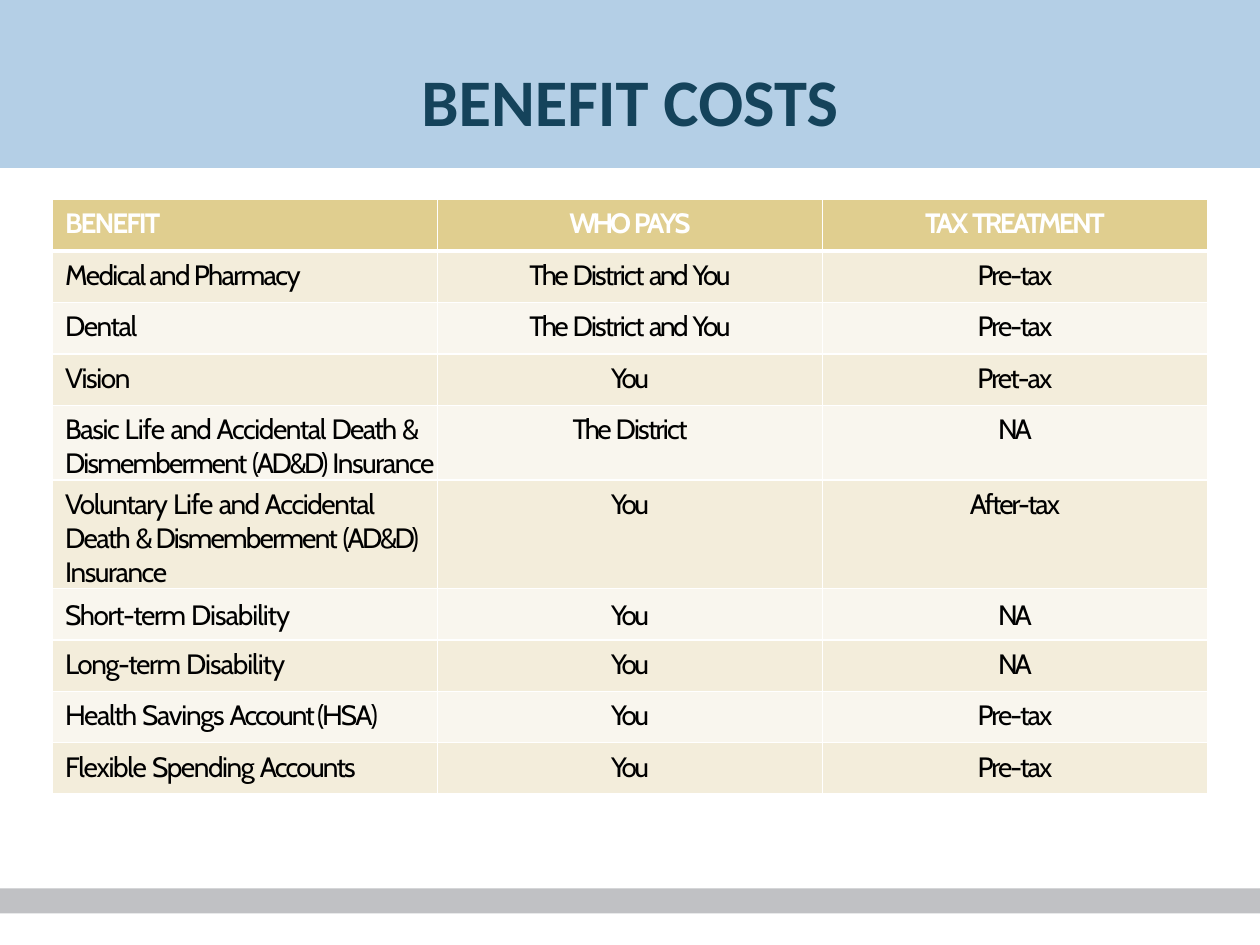
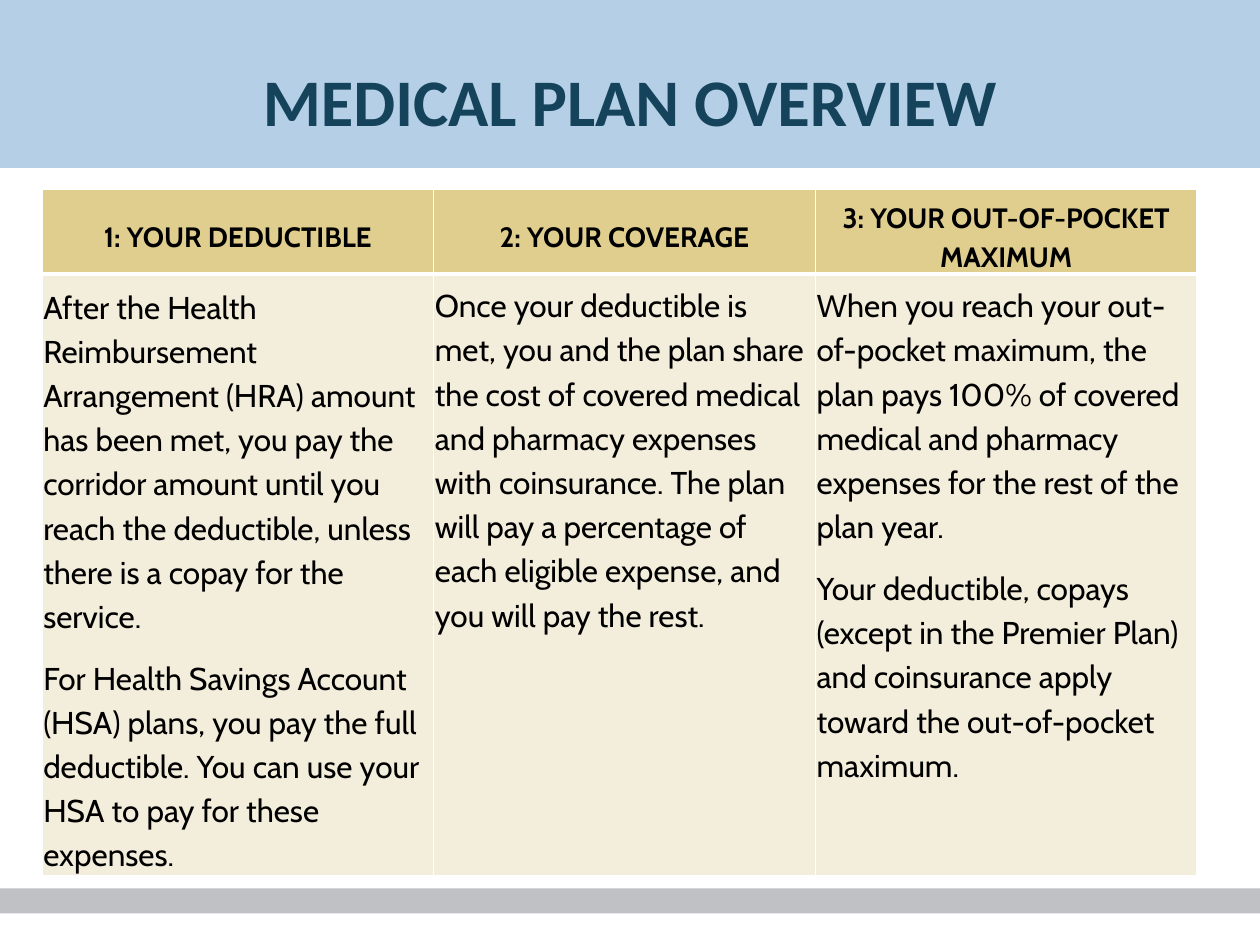
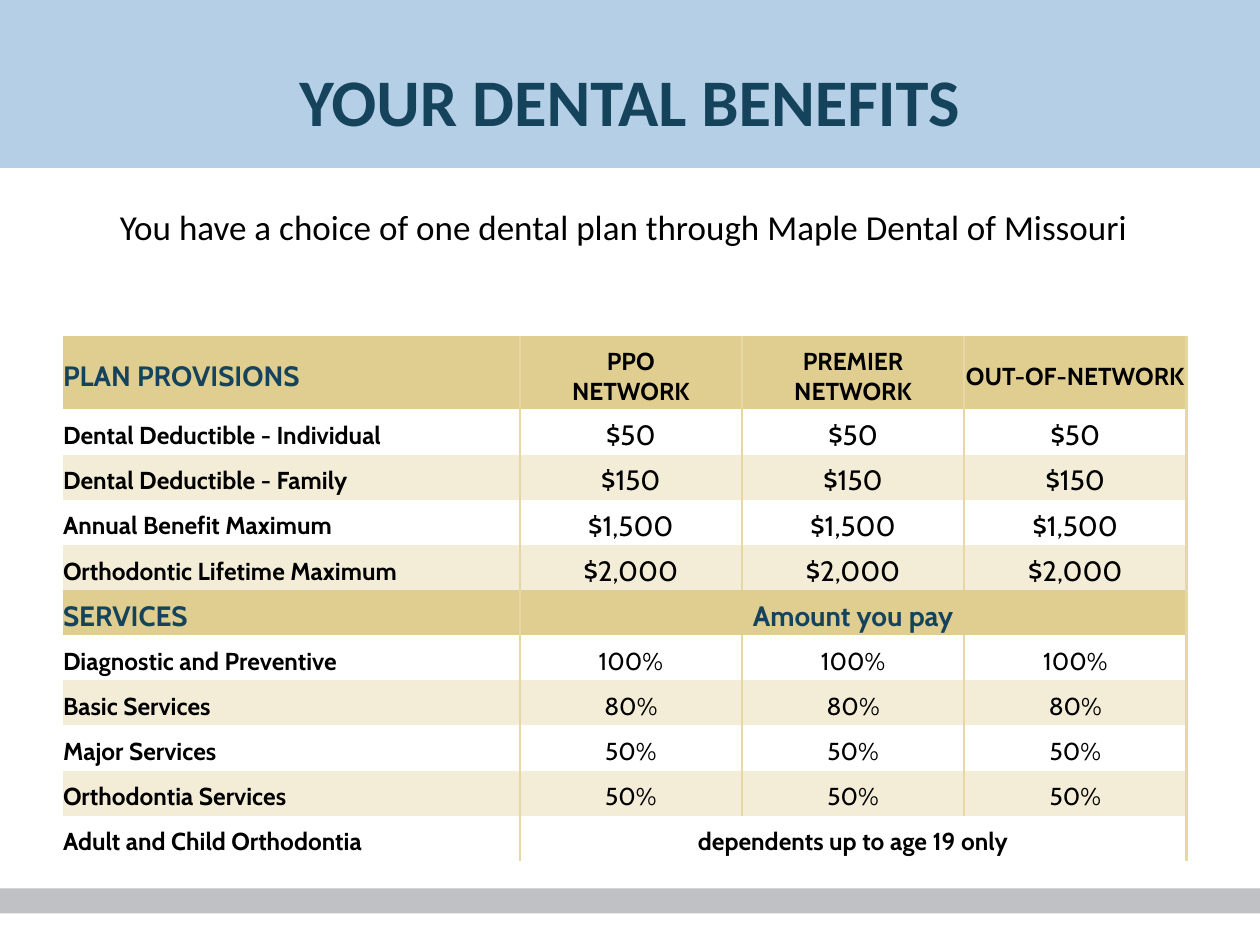
from dataclasses import dataclass, field, replace

from lxml import etree
from pptx import Presentation
from pptx.dml.color import RGBColor
from pptx.enum.shapes import MSO_SHAPE
from pptx.enum.text import MSO_ANCHOR, PP_ALIGN
from pptx.oxml.ns import qn
from pptx.util import Inches, Pt

RECTANGLE = MSO_SHAPE.RECTANGLE
LEFT, CENTER = PP_ALIGN.LEFT, PP_ALIGN.CENTER
TOP, MIDDLE = MSO_ANCHOR.TOP, MSO_ANCHOR.MIDDLE
GRID_COLUMNS, GRID_ROWS = 120, 90


@dataclass(frozen=True)
class Theme:
    heading_font: str = "Calibri"
    table_font: str = "Cabin"
    navy: str = "15435B"
    sky: str = "B4CFE6"
    gray: str = "C0C1C4"
    white: str = "FFFFFF"
    black: str = "000000"
    gold: str = "E0CE8F"
    dental_gold: str = "E0CE90"
    sand: str = "F3EDDB"
    dental_sand: str = "F3EDD8"
    ivory: str = "F9F6EE"
    rule: str = "E6D7A4"
    title_size: int = 38
    intro_size: int = 20
    body_size: int = 18
    cell_size: int = 16
    label_size: int = 14


THEME = Theme()


@dataclass(frozen=True)
class CellStyle:
    fill: str
    size: int = THEME.cell_size
    color: str = THEME.black
    bold: bool = False
    align: PP_ALIGN = LEFT
    anchor: MSO_ANCHOR = TOP
    insets: tuple = (0, 0.06, 0, 0)
    before: float = 0
    after: float = 0
    line: float = 1.0
    borders: dict = field(default_factory=dict)


class Deck:
    def __init__(self, theme):
        self.theme = theme
        self.presentation = Presentation()
        self.presentation.slide_width = Inches(10)
        self.presentation.slide_height = Inches(7.5)
        self.slide = None

    def across(self, columns):
        return round(self.presentation.slide_width * columns / GRID_COLUMNS)

    def down(self, rows):
        return round(self.presentation.slide_height * rows / GRID_ROWS)

    def box(self, left, top, width, height):
        return self.across(left), self.down(top), self.across(width), self.down(height)

    def add_slide(self, title):
        self.slide = self.presentation.slides.add_slide(self.presentation.slide_layouts[6])
        self.band(84.6, 2.4, self.theme.gray)
        self.band(0, 16, self.theme.sky)
        self.text(title, (0, 3, 120, 13), self.theme.title_size, self.theme.navy,
                  bold=True, anchor=MIDDLE)

    def band(self, top, height, color):
        shape = self.slide.shapes.add_shape(RECTANGLE, *self.box(0, top, GRID_COLUMNS, height))
        shape.shadow.inherit = False
        shape.fill.solid()
        shape.fill.fore_color.rgb = RGBColor.from_string(color)
        shape.line.fill.background()

    def text(self, words, place, size, color, bold=False, anchor=TOP, before=0, left_inset=0.1):
        frame = self.slide.shapes.add_textbox(*self.box(*place)).text_frame
        frame.word_wrap = True
        frame.vertical_anchor = anchor
        frame.margin_left = Inches(left_inset)
        paragraph = frame.paragraphs[0]
        paragraph.text = words
        paragraph.alignment = CENTER
        paragraph.space_before = Pt(before)
        self.font(paragraph, self.theme.heading_font, size, color, bold)

    def font(self, paragraph, name, size, color, bold):
        paragraph.font.name = name
        paragraph.font.size = Pt(size)
        paragraph.font.bold = bold
        paragraph.font.color.rgb = RGBColor.from_string(color)

    def table(self, place, widths, heights, rows, style_for):
        shape = self.slide.shapes.add_table(len(rows), len(widths), *self.box(*place))
        table = shape.table
        table.first_row = table.horz_banding = False
        for column, width in zip(table.columns, widths):
            column.width = self.across(width)
        for row, height in zip(table.rows, heights):
            row.height = self.down(height)
        shape.height = self.down(place[3])
        for row_index, contents in enumerate(rows):
            for column_index in range(len(widths)):
                cell = table.cell(row_index, column_index)
                content = contents[column_index] if column_index < len(contents) else None
                self.cell(cell, content, style_for(row_index, column_index))
            if len(contents) < len(widths):
                table.cell(row_index, len(contents) - 1).merge(
                    table.cell(row_index, len(widths) - 1))

    def cell(self, cell, content, style):
        self.borders(cell, style.borders)
        cell.fill.solid()
        cell.fill.fore_color.rgb = RGBColor.from_string(style.fill)
        cell.vertical_anchor = style.anchor
        cell.margin_left, cell.margin_top, cell.margin_right, cell.margin_bottom = map(
            Inches, style.insets)
        if content is None:
            return
        frame = cell.text_frame
        blocks = content if isinstance(content, list) else [content]
        for index, block in enumerate(blocks):
            paragraph = frame.add_paragraph() if index else frame.paragraphs[0]
            if isinstance(block, str):
                paragraph.text = block
            else:
                self.tracked_runs(paragraph, block)
            paragraph.alignment = style.align
            paragraph.space_before = Pt(style.before)
            paragraph.space_after = Pt(style.after)
            paragraph.line_spacing = style.line
            self.font(paragraph, self.theme.table_font, style.size, style.color, style.bold)

    def tracked_runs(self, paragraph, pieces):
        for words, tracking in pieces:
            run = paragraph.add_run()
            run.text = words
            run._r.get_or_add_rPr().set("spc", str(round(tracking * 100)))

    def borders(self, cell, borders):
        properties = cell._tc.get_or_add_tcPr()
        for side in "LRTB":
            line = etree.SubElement(properties, qn(f"a:ln{side}"))
            if side not in borders:
                etree.SubElement(line, qn("a:noFill"))
                continue
            color, width = borders[side]
            line.set("w", str(Pt(width)))
            fill = etree.SubElement(line, qn("a:solidFill"))
            etree.SubElement(fill, qn("a:srgbClr")).set("val", color)


WHITE_FRAME = {side: (THEME.white, 1) for side in "LRTB"}
HEADER_FRAME = {**WHITE_FRAME, "B": (THEME.white, 3)}


def add_benefit_costs(deck):
    you = (("You", -1.6),)
    shared = (("The ", -1.4), ("District ", -1), ("and ", -1.4), ("You", -1.6))
    district = (("The ", -1.4), ("District", -1))
    pre_tax = (("Pre-tax", -1.1),)
    not_applicable = (("NA", -1.9),)
    life_insurance = (
        ("Life ", -0.5), ("and ", -0.9), ("Accidental ", -0.8), ("Death ", -0.9),
        ("& ", -1.9), ("Dismemberment ", -1), ("(AD&D) ", -1.4), ("Insurance", -0.8))
    disability = ("Disability", -0.6)
    rows = [
        ((("BENEFIT", -1.1),), (("WHO ", -2), ("PAYS", -1.4)),
         (("TAX", -1.6), (" TREATMENT", -1.5))),
        ((("Medical ", -0.9), ("and ", -0.9), ("Pharmacy", -0.9)), shared, pre_tax),
        ((("Dental", -0.8),), shared, pre_tax),
        ((("Vision", -0.8),), you, (("Pret-ax", -1.1),)),
        ((("Basic ", -0.8), *life_insurance), district, not_applicable),
        ((("Voluntary ", -0.8), *life_insurance), you, (("After-tax", -1.1),)),
        ((("Short-term ", -0.8), disability), you, not_applicable),
        ((("Long-term ", -0.8), disability), you, not_applicable),
        ((("Health ", -0.8), ("Savings ", -0.7), ("Account ", -1.1), ("(HSA)", -1.1)),
         you, pre_tax),
        ((("Flexible ", -0.7), ("Spending ", -0.8), ("Accounts", -1)), you, pre_tax),
    ]
    short_term_row = 6

    def style_for(row, column):
        style = CellStyle(
            fill=THEME.sand if row % 2 else THEME.ivory, before=4.5, borders=WHITE_FRAME,
            align=CENTER if column else LEFT,
            insets=(0 if column else 0.1, 0.08 if row == short_term_row else 0.06, 0, 0))
        if row == 0:
            style = replace(style, fill=THEME.gold, color=THEME.white, bold=True,
                            borders=HEADER_FRAME)
        return style

    deck.add_slide("BENEFIT COSTS")
    deck.table((5, 19, 110, 59.6), [110 / 3] * 3, [4.9] * len(rows), rows, style_for)


def add_medical_plan(deck):
    rows = [
        ("1: YOUR DEDUCTIBLE", "2: YOUR COVERAGE", "3: YOUR OUT-OF-POCKET MAXIMUM"),
        (
            ["After the Health Reimbursement Arrangement (HRA) amount has been met, you pay "
             "the corridor amount until you reach the deductible, unless there is a copay "
             "for the service.",
             "For Health Savings Account (HSA) plans, you pay the full deductible. You can "
             "use your HSA to pay for these expenses."],
            "Once your deductible is met, you and the plan share the cost of covered medical "
            "and pharmacy expenses with coinsurance. The plan will pay a percentage of each "
            "eligible expense, and you will pay the rest.",
            ["When you reach your out-of-pocket maximum, the plan pays 100% of covered "
             "medical and pharmacy expenses for the rest of the plan year.",
             "Your deductible, copays (except in the Premier Plan) and coinsurance apply "
             "toward the out-of-pocket maximum."],
        ),
    ]
    body = CellStyle(fill=THEME.sand, size=THEME.body_size, insets=(0.01, 0.06, 0.01, 0),
                     after=10, line=1.15, borders=WHITE_FRAME)
    header = replace(body, fill=THEME.gold, size=THEME.cell_size, bold=True, align=CENTER,
                     anchor=MIDDLE, borders=HEADER_FRAME)
    first_body = replace(body, insets=(0.01, 0.07, 0.01, 0))

    def style_for(row, column):
        if row == 0:
            return header
        return body if column else first_body

    row_heights = [8.1, 57.3]
    deck.add_slide("MEDICAL PLAN OVERVIEW")
    deck.table((4, 18, 110, sum(row_heights)), [37.3, 36.35, 36.35], row_heights, rows,
               style_for)


def add_dental_benefits(deck):
    provisions = [
        ("Dental Deductible - Individual", "$50"),
        ("Dental Deductible - Family", "$150"),
        ("Annual Benefit Maximum", "$1,500"),
        ("Orthodontic Lifetime Maximum", "$2,000"),
    ]
    services = [
        ("Diagnostic and Preventive", "100%"),
        ("Basic Services", "80%"),
        ("Major Services", "50%"),
        ("Orthodontia Services", "50%"),
    ]
    rows = [
        ("PLAN PROVISIONS", "PPO\vNETWORK", "PREMIER NETWORK", "OUT-OF-NETWORK"),
        *((label, *[amount] * 3) for label, amount in provisions),
        ("SERVICES", "Amount you pay"),
        *((label, *[share] * 3) for label, share in services),
        ("Adult and Child Orthodontia", "dependents up to age 19 only"),
    ]
    services_row = len(provisions) + 1
    last_row = len(rows) - 1
    rule = (THEME.rule, 1.5)

    def style_for(row, column):
        style = CellStyle(
            fill=THEME.white if (row % services_row) % 2 else THEME.dental_sand,
            size=THEME.label_size, bold=column == 0 or row in (0, last_row),
            align=CENTER if column else LEFT, anchor=MIDDLE, before=4.5,
            borders={"L": rule, "R": rule} if column else {"R": rule})
        if row in (0, services_row):
            style = replace(style, fill=THEME.dental_gold)
        if row == services_row or (row, column) == (0, 0):
            return replace(style, size=THEME.cell_size, color=THEME.navy, bold=True)
        if column and 0 < row < services_row:
            return replace(style, size=THEME.cell_size)
        if row == last_row:
            return replace(style, fill=THEME.white)
        return style

    deck.add_slide("YOUR DENTAL BENEFITS")
    deck.text("You have a choice of one dental plan through Maple Dental of Missouri",
              (5, 19, 110, 8), THEME.intro_size, THEME.black, before=4, left_inset=0)
    network_width = (107 - 43.5) / 3
    deck.table((6, 32, 107, 50), [43.5] + [network_width] * 3, [7] + [4.3] * last_row,
               rows, style_for)


def main():
    deck = Deck(THEME)
    add_benefit_costs(deck)
    add_medical_plan(deck)
    add_dental_benefits(deck)
    deck.presentation.save("out.pptx")


if __name__ == "__main__":
    main()
